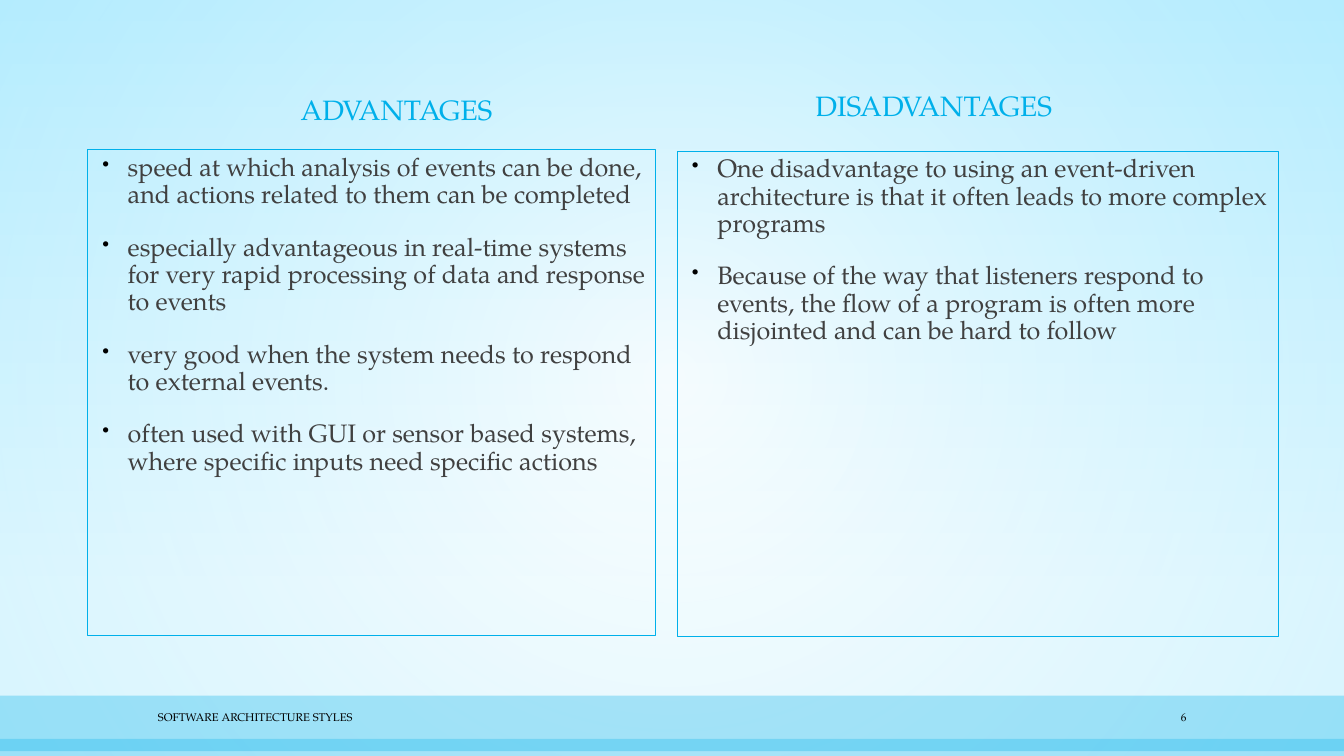
from dataclasses import dataclass

from lxml.etree import SubElement
from pptx import Presentation
from pptx.dml.color import RGBColor as Rgb
from pptx.enum.shapes import MSO_SHAPE as Preset
from pptx.enum.text import MSO_ANCHOR as Anchor, PP_ALIGN as Align
from pptx.oxml.ns import qn
from pptx.util import Cm, Pt


@dataclass(frozen=True)
class Theme:
    """Colours, font and type sizes of the slide."""
    accent: str = "00B0EA"
    body: str = "404040"
    black: str = "000000"
    white: str = "FFFFFF"
    sky: str = "C8F1FF"
    glow_edge: str = "91E4FF"
    font: str = "TeX Gyre Pagella"
    heading_size: int = 20
    body_size: int = 18
    footer_size: int = 8


THEME = Theme()
WIDTH, HEIGHT = 33.87, 19.05

ADVANTAGES = [
    "speed at which analysis of events can be done, and actions related to them can be completed",
    "especially advantageous in real-time systems for very rapid processing of data and response to events",
    "very good when the system needs to respond to external events.",
    "often used with GUI or sensor based systems, where specific inputs need specific actions",
]
DISADVANTAGES = [
    "One disadvantage to using an event-driven architecture is that it often leads to more complex programs",
    "Because of the way that listeners respond to events, the flow of a program is often more "
    "disjointed and can be hard to follow",
]


def set_alpha(fill, percents):
    """Give each colour of a fill its opacity in percent."""
    for color, percent in zip(fill._xPr.iter(qn("a:srgbClr")), percents):
        SubElement(color, qn("a:alpha"), val=str(percent * 1000))


def set_gradient(fill, stops):
    """Make a two-stop gradient from (position, colour) pairs."""
    fill.gradient()
    for stop, (position, color) in zip(fill.gradient_stops, stops):
        stop.position = position
        stop.color.rgb = Rgb.from_string(color)


def add_rectangle(slide, box):
    """Add a rectangle without shadow or outline."""
    shape = slide.shapes.add_shape(Preset.RECTANGLE, *map(Cm, box))
    shape.shadow.inherit = False
    shape.line.fill.background()
    return shape


def add_glow(slide):
    """Cover the slide with a translucent glow from its centre."""
    glow = add_rectangle(slide, (0, 0, WIDTH, HEIGHT))
    set_gradient(glow.fill, [(0, THEME.white), (1, THEME.glow_edge)])
    set_alpha(glow.fill, (49, 35))
    gradient = glow._element.spPr.find(qn("a:gradFill"))
    gradient.remove(gradient.find(qn("a:lin")))
    circle = SubElement(gradient, qn("a:path"), path="circle")
    SubElement(circle, qn("a:fillToRect"), dict.fromkeys("ltrb", "50000"))


def add_band(slide, box, opacity):
    """Add a translucent accent band."""
    band = add_rectangle(slide, box)
    band.fill.solid()
    band.fill.fore_color.rgb = Rgb.from_string(THEME.accent)
    set_alpha(band.fill, [opacity])


def style_paragraph(paragraph, size, color, align=Align.LEFT):
    """Set the alignment and font of a paragraph."""
    paragraph.alignment = align
    paragraph.font.name = THEME.font
    paragraph.font.size = Pt(size)
    paragraph.font.color.rgb = Rgb.from_string(color)


def add_label(slide, box, text, size, color, align=Align.LEFT):
    """Add a vertically centred line of text."""
    frame = slide.shapes.add_textbox(*map(Cm, box)).text_frame
    frame.word_wrap = True
    frame.vertical_anchor = Anchor.MIDDLE
    paragraph = frame.paragraphs[0]
    paragraph.text = text
    paragraph.line_spacing = 0.9
    style_paragraph(paragraph, size, color, align)


def add_bullet(paragraph):
    """Give a paragraph a hanging black bullet."""
    properties = paragraph._p.get_or_add_pPr()
    properties.set("marL", str(Cm(0.76)))
    properties.set("indent", str(Cm(-0.64)))
    color = SubElement(properties, qn("a:buClr"))
    SubElement(color, qn("a:srgbClr"), val=THEME.black)
    SubElement(properties, qn("a:buSzPct"), val="80000")
    SubElement(properties, qn("a:buChar"), char="•")


def add_panel(slide, box, points):
    """Add an outlined panel with a bulleted list."""
    panel = add_rectangle(slide, box)
    panel.fill.background()
    panel.line.color.rgb = Rgb.from_string(THEME.accent)
    panel.line.width = Pt(0.75)
    frame = panel.text_frame
    frame.word_wrap = True
    frame.vertical_anchor = Anchor.TOP
    for index, point in enumerate(points):
        paragraph = frame.add_paragraph() if index else frame.paragraphs[0]
        paragraph.text = point
        paragraph.line_spacing = 0.9
        paragraph.space_before = Pt(18 if index else 0)
        add_bullet(paragraph)
        style_paragraph(paragraph, THEME.body_size, THEME.body)


def main():
    """Build and save the slide."""
    presentation = Presentation()
    presentation.slide_width, presentation.slide_height = Cm(WIDTH), Cm(HEIGHT)
    slide = presentation.slides.add_slide(presentation.slide_layouts[6])
    background = slide.background.fill
    set_gradient(background, [(0, THEME.sky), (0.79, THEME.white)])
    background.gradient_angle = 270
    add_glow(slide)
    add_band(slide, (0, 17.53, WIDTH, 1.4), 30)
    add_band(slide, (0, 18.62, WIDTH, 0.43), 28)

    columns = [
        ("ADVANTAGES ", (3.73, 1.75, 12.7, 2.11), (2.21, 3.78, 14.3, 12.24), ADVANTAGES),
        ("DISADVANTAGES ", (17.27, 1.65, 12.7, 2.11), (17.07, 3.81, 15.14, 12.22), DISADVANTAGES),
    ]
    for heading, heading_box, panel_box, points in columns:
        add_label(slide, heading_box, heading, THEME.heading_size, THEME.accent, Align.CENTER)
        add_panel(slide, panel_box, points)

    add_label(slide, (3.73, 17.75, 19.89, 0.66), "SOFTWARE ARCHITECTURE STYLES",
              THEME.footer_size, THEME.black)
    add_label(slide, (28.37, 17.75, 1.78, 0.66), "6", THEME.footer_size, THEME.black, Align.RIGHT)
    presentation.save("out.pptx")


if __name__ == "__main__":
    main()
